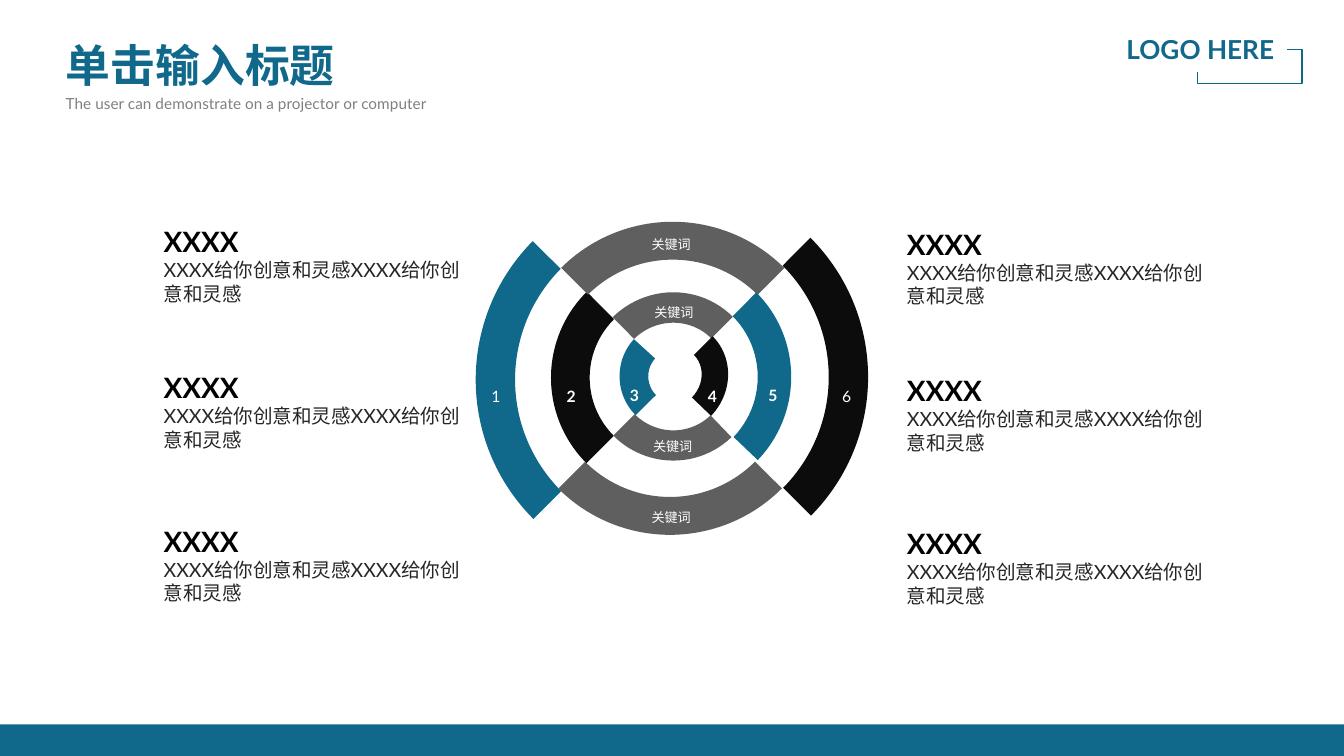
from dataclasses import dataclass

from lxml.etree import SubElement
from pptx import Presentation
from pptx.dml.color import RGBColor as Rgb
from pptx.enum.shapes import MSO_CONNECTOR as Link, MSO_SHAPE as Kind
from pptx.enum.text import MSO_ANCHOR as Anchor, MSO_AUTO_SIZE as Fit, PP_ALIGN as Align
from pptx.oxml.ns import qn
from pptx.util import Inches, Pt

TEAL, BLACK, GREY, WHITE = "10688B", "0C0C0C", "5F5F5F", "FFFFFF"
FONT = "Lato"


@dataclass
class Box:
    left: float
    top: float
    width: float
    height: float

    def spans(self) -> list:
        return [Inches(v) for v in (self.left, self.top, self.width, self.height)]


@dataclass
class Arc:
    box: Box
    flip: str
    end: float
    thick: float
    color: str


@dataclass
class Run:
    text: str
    size: float
    color: str
    bold: bool = False


def tint(code: str) -> Rgb:
    return Rgb.from_string(code)


def write(frame, runs: list[Run], align=Align.LEFT, wrap: bool = True) -> None:
    """Set each run in a paragraph of its own."""
    frame.word_wrap = wrap
    frame.auto_size = Fit.NONE
    frame.vertical_anchor = Anchor.TOP
    for i, item in enumerate(runs):
        para = frame.add_paragraph() if i else frame.paragraphs[0]
        para.alignment = align
        run = para.add_run()
        run.text = item.text
        run.font.name = FONT
        run.font.size = Pt(item.size)
        run.font.bold = item.bold
        run.font.color.rgb = tint(item.color)


def add_text(slide, box: Box, runs: list[Run], align=Align.LEFT, wrap: bool = True):
    frame = slide.shapes.add_textbox(*box.spans()).text_frame
    write(frame, runs, align, wrap)
    return frame


def add_solid(slide, kind, box: Box, color: str):
    shape = slide.shapes.add_shape(kind, *box.spans())
    shape.shadow.inherit = False
    shape.fill.solid()
    shape.fill.fore_color.rgb = tint(color)
    shape.line.fill.background()
    return shape


def add_arc(slide, arc: Arc) -> None:
    """Draw a quarter ring, mirrored to its side and turned by 45 degrees."""
    shape = add_solid(slide, Kind.BLOCK_ARC, arc.box, arc.color)
    shape.rotation = 315
    for i, value in enumerate((108, arc.end, arc.thick)):
        shape.adjustments[i] = value
    for axis in arc.flip:
        shape._element.spPr.xfrm.set("flip" + axis, "1")


def add_hook(slide, box: Box, bends: tuple[int, int]) -> None:
    """Draw the bent line under the logo text."""
    line = slide.shapes.add_connector(Link.ELBOW, 0, 0, 0, 0)
    line.left, line.top, line.width, line.height = box.spans()
    line.line.color.rgb = tint("0D678B")
    line.line.width = Pt(0.75)
    props = line._element.spPr
    for key, value in (("rot", "5400000"), ("flipH", "1"), ("flipV", "1")):
        props.xfrm.set(key, value)
    geom = props.find(qn("a:prstGeom"))
    geom.set("prst", "bentConnector4")
    guides = geom.find(qn("a:avLst"))
    if guides is None:
        guides = SubElement(geom, qn("a:avLst"))
    for i, bend in enumerate(bends, 1):
        SubElement(guides, qn("a:gd"), name=f"adj{i}", fmla=f"val {bend}")
    SubElement(props, qn("a:effectLst"))


ARCS = [
    # Left side
    Arc(Box(3.54, 1.36, 2.93, 2.93), "", 161.84, 0.1, TEAL),
    Arc(Box(4.1, 1.91, 1.8, 1.8), "", 162.15, 0.16, BLACK),
    Arc(Box(4.61, 2.39, 0.82, 0.82), "", 160.4, 0.26, TEAL),
    # Top
    Arc(Box(3.83, 1.65, 2.35, 2.35), "H", 161.94, 0.12, GREY),
    Arc(Box(4.36, 2.18, 1.28, 1.26), "H", 161.67, 0.18, GREY),
    # Bottom
    Arc(Box(3.81, 1.63, 2.35, 2.35), "V", 162.07, 0.12, GREY),
    Arc(Box(4.38, 2.17, 1.25, 1.26), "V", 161.4, 0.18, GREY),
    # Right side
    Arc(Box(3.53, 1.34, 2.93, 2.93), "HV", 161.84, 0.1, BLACK),
    Arc(Box(4.1, 1.92, 1.79, 1.78), "HV", 161.18, 0.14, TEAL),
    Arc(Box(4.56, 2.4, 0.87, 0.82), "HV", 161.33, 0.24, BLACK),
]
MARKS = [(3.38, 2.83), (3.94, 2.83), (4.41, 2.82), (4.99, 2.83), (5.44, 2.82), (5.99, 2.83)]
WORDS = [(4.76, 1.71), (4.78, 2.22), (4.77, 3.21), (4.76, 3.74)]
ROWS = [1.62, 2.71, 3.85]
SIDES = [(1.12, 0), (6.65, 0.02)]


def main() -> None:
    deck = Presentation()
    deck.slide_width = Inches(10)
    deck.slide_height = deck.slide_width * 9 // 16
    slide = deck.slides.add_slide(deck.slide_layouts[5])

    # Title and subtitle
    title = slide.shapes.title
    title.left, title.top, title.width, title.height = Box(0.39, 0.23, 2.23, 0.5).spans()
    write(title.text_frame, [Run("单击输入标题", 24, TEAL, True)], wrap=False)
    intro = Run("The user can demonstrate on a projector or computer", 8.25, "808080")
    frame = add_text(slide, Box(0.39, 0.63, 5.38, 0.25), [intro])
    frame.paragraphs[0].line_spacing = 1.14

    # Logo text with its hook
    logo = Run("LOGO HERE", 14, TEAL, True)
    add_text(slide, Box(8.24, 0.2, 1.34, 0.34), [logo], Align.RIGHT)
    add_hook(slide, Box(9.16, 0.12, 0.17, 0.67), (-49500, 116200))

    # Rings with numbers and keywords
    for arc in ARCS:
        add_arc(slide, arc)
    for i, (left, top) in enumerate(MARKS, 1):
        mark = Run(str(i), 8.4, WHITE, 1 < i < len(MARKS))
        add_text(slide, Box(left, top, 0.62, 0.21), [mark], Align.CENTER, False)
    for left, top in WORDS:
        word = Run("关键词", 7, WHITE)
        add_text(slide, Box(left, top, 0.47, 0.2), [word], Align.CENTER, False)

    # Notes on both sides
    note = [Run("XXXX", 15, "000000", True),
            Run("XXXX给你创意和灵感XXXX给你创意和灵感", 10.5, "262626")]
    for left, shift in SIDES:
        for top in ROWS:
            add_text(slide, Box(left, top + shift, 2.44, 0.71), note)

    # Footer band
    add_solid(slide, Kind.RECTANGLE, Box(0, 5.39, 10, 0.26), TEAL)
    deck.save("out.pptx")


if __name__ == "__main__":
    main()
